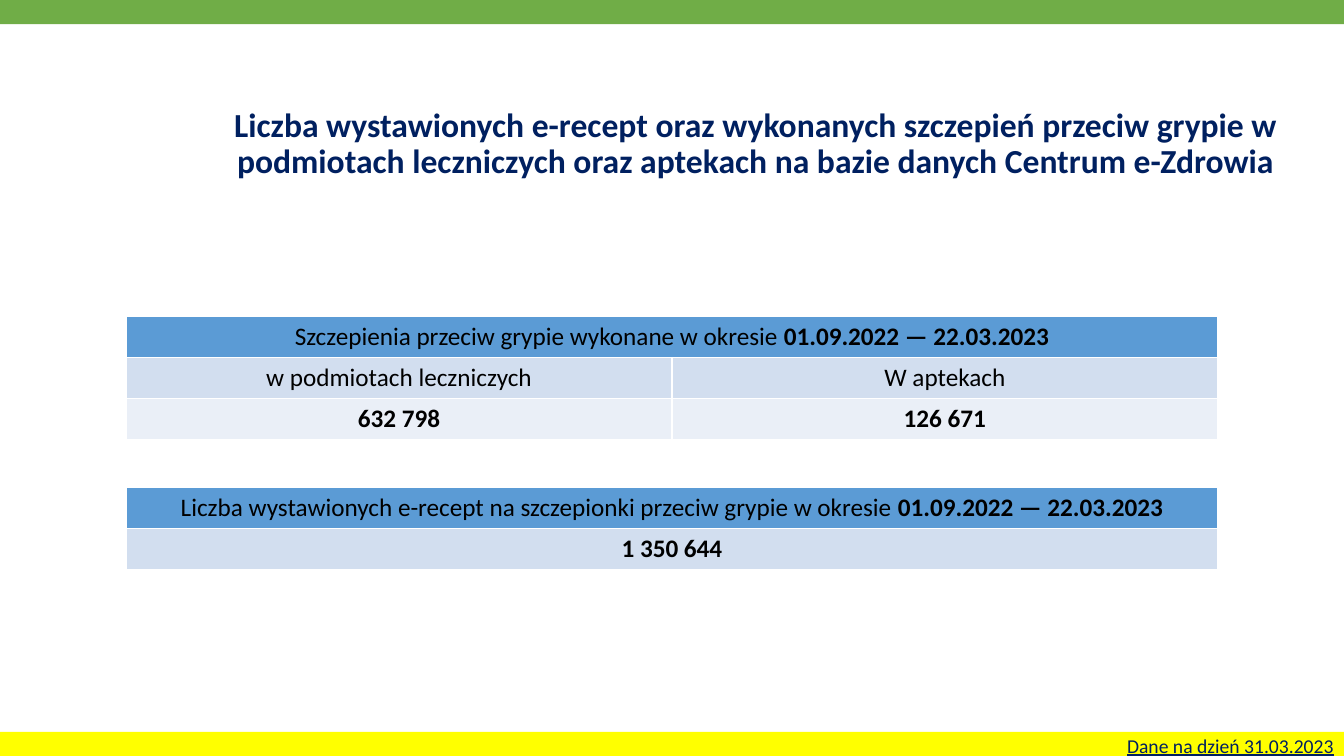
from pptx import Presentation
from pptx.dml.color import RGBColor
from pptx.enum import shapes, text
from pptx.util import Cm, Pt

NAVY = "002060"
PERIOD = "01.09.2022 — 22.03.2023"
ROW_H = Cm(1.03)


def paint(fill, color):
    fill.solid()
    fill.fore_color.rgb = RGBColor.from_string(color)


def write(p, parts, size, color, align):
    """Fill a paragraph with (wording, bold) runs in one style."""
    p.alignment = align
    for wording, bold in parts:
        r = p.add_run()
        r.text = wording
        r.font.name = "Calibri"
        r.font.size = Pt(size)
        r.font.bold = bold
        r.font.color.rgb = RGBColor.from_string(color)


prs = Presentation()
prs.slide_width, prs.slide_height = Cm(33.87), Cm(19.05)
s = prs.slides.add_slide(prs.slide_layouts[5])

# Bands along the top and bottom edges
band_h = Cm(0.61)
for top, color in ((0, "70AD47"), (prs.slide_height - band_h, "FFFF00")):
    band = s.shapes.add_shape(shapes.MSO_SHAPE.RECTANGLE, 0, top, prs.slide_width, band_h)
    band.shadow.inherit = False
    paint(band.fill, color)
    band.line.fill.background()

# Title
title = s.shapes.title
title.left, title.top, title.width, title.height = Cm(5.64), Cm(2.06), Cm(26.8), Cm(3.18)
tf = title.text_frame
tf.vertical_anchor = text.MSO_ANCHOR.MIDDLE
p = tf.paragraphs[0]
p.line_spacing = 0.9
write(p, [("Liczba wystawionych e-recept oraz wykonanych szczepień przeciw grypie w "
           "podmiotach leczniczych oraz aptekach na bazie danych Centrum e-Zdrowia", True)],
      24, NAVY, text.PP_ALIGN.CENTER)

# Tables: top, header wording, body rows as (bold, fill, values)
tables = [
    (Cm(7.98), "Szczepienia przeciw grypie wykonane w okresie ",
     [(False, "D2DEEF", ["w podmiotach leczniczych", "W aptekach"]),
      (True, "EAEFF7", ["632 798", "126 671"])]),
    (Cm(12.29), "Liczba wystawionych e-recept na szczepionki przeciw grypie w okresie ",
     [(True, "D2DEEF", ["1 350 644"])]),
]
for top, header, body in tables:
    n_rows, n_cols = len(body) + 1, len(body[0][2])
    table = s.shapes.add_table(n_rows, n_cols, Cm(3.18), top, Cm(27.51), ROW_H * n_rows).table
    head = table.cell(0, 0)
    if n_cols > 1:
        head.merge(table.cell(0, n_cols - 1))
    paint(head.fill, "5B9BD5")
    write(head.text_frame.paragraphs[0], [(header, False), (PERIOD, True)],
          18, "000000", text.PP_ALIGN.CENTER)
    for i, (bold, color, values) in enumerate(body, 1):
        for j, value in enumerate(values):
            cell = table.cell(i, j)
            paint(cell.fill, color)
            write(cell.text_frame.paragraphs[0], [(value, bold)],
                  18, "000000", text.PP_ALIGN.CENTER)

# Data date
tf = s.shapes.add_textbox(Cm(28.1), Cm(18.36), Cm(5.77), Cm(0.86)).text_frame
tf.word_wrap = False
tf.auto_size = text.MSO_AUTO_SIZE.SHAPE_TO_FIT_TEXT
p = tf.paragraphs[0]
write(p, [("Dane na dzień 31.03.2023", False)], 14, NAVY, text.PP_ALIGN.RIGHT)
p.runs[0].font.underline = True

prs.save("out.pptx")
